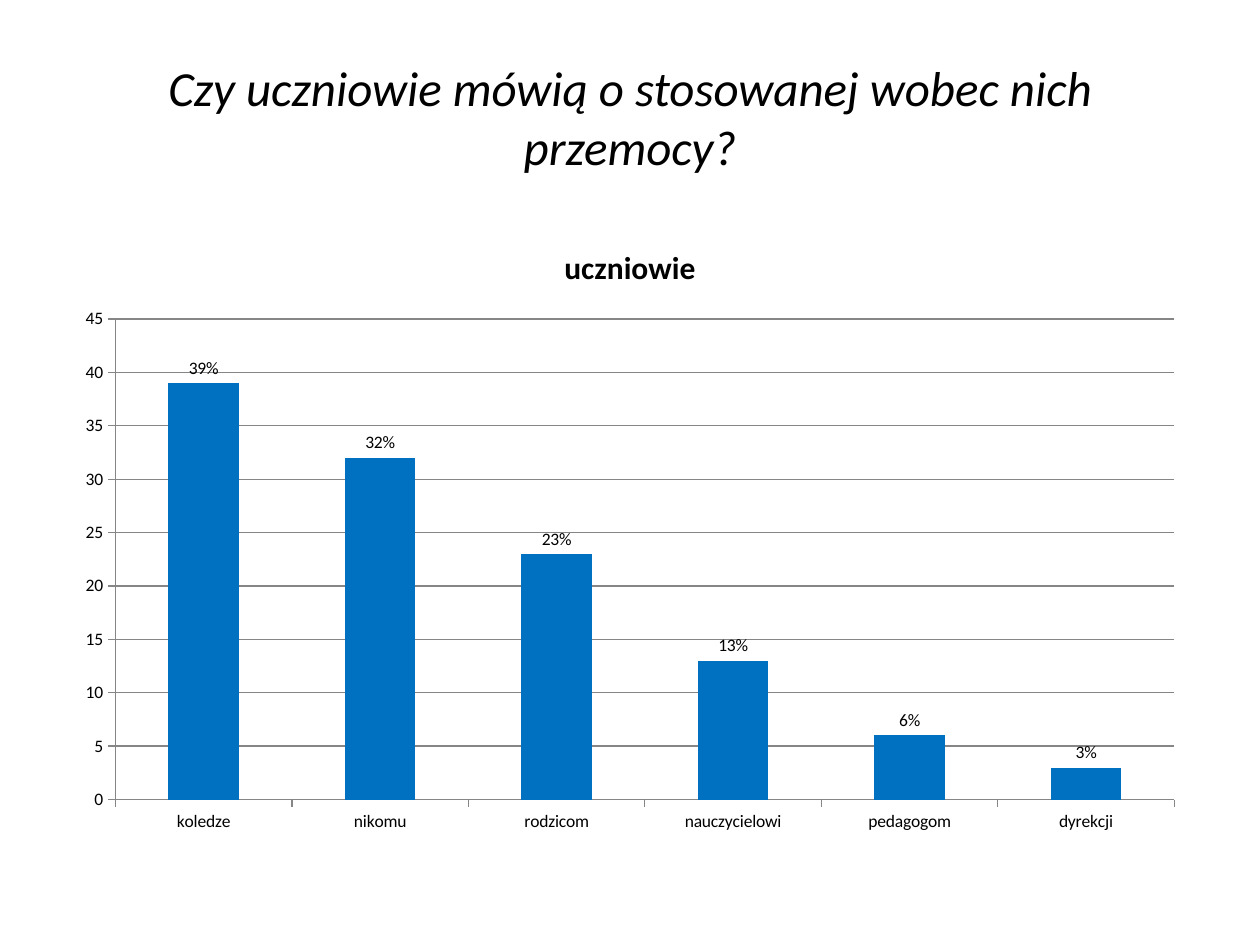
from dataclasses import dataclass

from pptx import Presentation
from pptx.chart.data import CategoryChartData
from pptx.dml.color import RGBColor
from pptx.enum.chart import XL_CHART_TYPE, XL_LABEL_POSITION, XL_TICK_MARK
from pptx.enum.text import MSO_ANCHOR, PP_ALIGN
from pptx.util import Inches, Pt

COLUMNS = XL_CHART_TYPE.COLUMN_CLUSTERED
ABOVE_BAR = XL_LABEL_POSITION.OUTSIDE_END
OUTSIDE = XL_TICK_MARK.OUTSIDE
MIDDLE = MSO_ANCHOR.MIDDLE
CENTER = PP_ALIGN.CENTER


@dataclass(frozen=True)
class Theme:
    """Hold the colours, font and type sizes of the slide."""

    font: str = "Calibri"
    text: RGBColor = RGBColor(0x00, 0x00, 0x00)
    bar: RGBColor = RGBColor(0x00, 0x70, 0xC0)
    rule: RGBColor = RGBColor(0x86, 0x86, 0x86)
    heading: Pt = Pt(28)
    chart_title: Pt = Pt(18)
    label: Pt = Pt(10)


THEME = Theme()
HEADING = "Czy uczniowie mówią o stosowanej wobec nich przemocy?"
SERIES = "uczniowie"
ANSWERS = {
    "koledze": 39,
    "nikomu": 32,
    "rodzicom": 23,
    "nauczycielowi": 13,
    "pedagogom": 6,
    "dyrekcji": 3,
}


def set_values(target, values):
    """Set attributes of an object from a dict of format values."""
    for name, value in values.items():
        setattr(target, name, value)


def style_font(font, size, **values):
    """Apply the theme font at the given size."""
    set_values(font, {"name": THEME.font, "size": size, **values})
    font.color.rgb = THEME.text


def style_line(line):
    """Draw a chart rule as a thin grey line."""
    line.color.rgb = THEME.rule
    line.width = Pt(0.75)


def add_heading(page, left, top, width, height):
    """Place the centred question in its box."""
    box = page.shapes.add_textbox(left, top, width, height)
    set_values(box.text_frame, {"word_wrap": True, "vertical_anchor": MIDDLE})
    para = box.text_frame.paragraphs[0]
    para.alignment = CENTER
    span = para.add_run()
    span.text = HEADING
    style_font(span.font, THEME.heading, italic=True)


def add_answer_chart(page, left, top, width, height):
    """Place the column chart of answers in its box."""
    data = CategoryChartData()
    data.categories = list(ANSWERS)
    data.add_series(SERIES, list(ANSWERS.values()))
    chart = page.shapes.add_chart(COLUMNS, left, top, width, height, data).chart
    set_values(chart, {"has_legend": False, "has_title": True})
    style_font(chart.font, THEME.label)

    title = chart.chart_title
    title.include_in_layout = False
    span = title.text_frame.paragraphs[0].add_run()
    span.text = SERIES
    style_font(span.font, THEME.chart_title, bold=True)

    for axis in (chart.category_axis, chart.value_axis):
        axis.major_tick_mark = OUTSIDE
        style_line(axis.format.line)
    set_values(
        chart.value_axis,
        {"minimum_scale": 0, "maximum_scale": 45, "major_unit": 5,
         "has_major_gridlines": True},
    )
    style_line(chart.value_axis.major_gridlines.format.line)

    plot = chart.plots[0]
    set_values(plot, {"gap_width": 150, "vary_by_categories": False,
                      "has_data_labels": True})
    set_values(
        plot.data_labels,
        {"show_value": True, "position": ABOVE_BAR, "number_format": '0"%"',
         "number_format_is_linked": False},
    )
    style_font(plot.data_labels.font, THEME.label)
    fill = plot.series[0].format.fill
    fill.solid()
    fill.fore_color.rgb = THEME.bar


def main():
    """Build and save the slide."""
    deck = Presentation()
    set_values(deck, {"slide_width": Inches(10), "slide_height": Inches(7.5)})
    page = deck.slides.add_slide(deck.slide_layouts[6])
    left, width = Inches(0.5), Inches(9)
    add_heading(page, left, Inches(0.3), width, Inches(1.25))
    add_answer_chart(page, left, Inches(1.75), width, Inches(4.95))
    deck.save("out.pptx")


if __name__ == "__main__":
    main()
